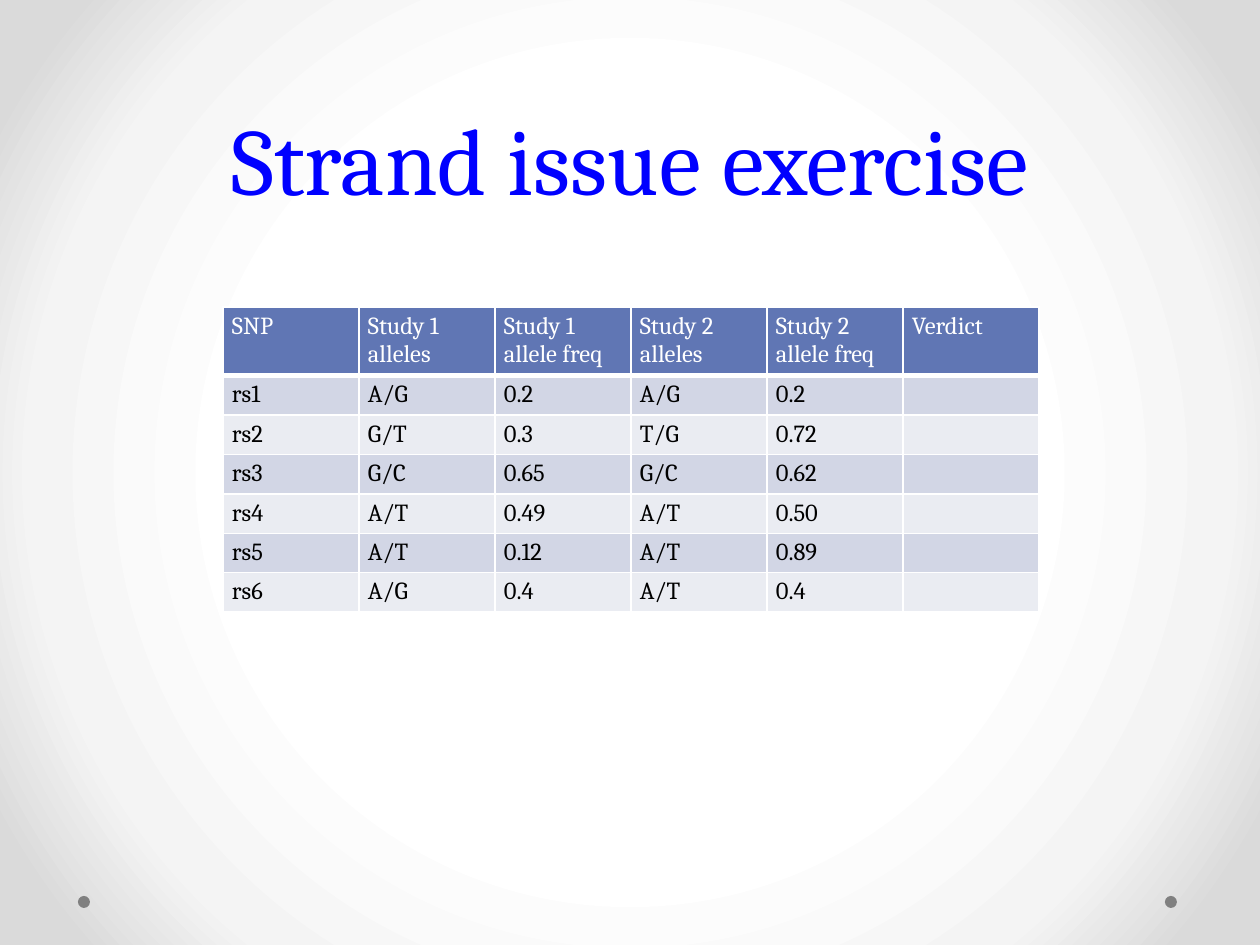
from dataclasses import dataclass

from lxml.etree import SubElement
from pptx import Presentation
from pptx.dml.color import RGBColor
from pptx.enum.shapes import MSO_SHAPE
from pptx.enum.text import MSO_ANCHOR, PP_ALIGN
from pptx.oxml.ns import qn
from pptx.util import Emu, Pt

EMU_PER_PX = 914400 // 126


@dataclass(frozen=True)
class Theme:
    font: str = "Cambria"
    title_size: int = 54
    title_spacing: int = 58
    table_size: int = 14
    title: str = "0000FF"
    header: str = "6076B4"
    header_text: str = "FFFFFF"
    body_text: str = "000000"
    bands: tuple = ("D2D6E5", "EAECF2")
    border: str = "FFFFFF"
    dot: str = "808080"
    backdrop: tuple = ((50, "FFFFFF"), (76, "F4F4F4"), (92, "DADADA"))


THEME = Theme()

SNP_ROWS = [
    ("SNP", "Study 1 alleles", "Study 1 allele freq",
     "Study 2 alleles", "Study 2 allele freq", "Verdict"),
    ("rs1", "A/G", "0.2", "A/G", "0.2", ""),
    ("rs2", "G/T", "0.3", "T/G", "0.72", ""),
    ("rs3", "G/C", "0.65", "G/C", "0.62", ""),
    ("rs4", "A/T", "0.49", "A/T", "0.50", ""),
    ("rs5", "A/T", "0.12", "A/T", "0.89", ""),
    ("rs6", "A/G", "0.4", "A/T", "0.4", ""),
]


def px(length):
    return Emu(length * EMU_PER_PX)


def add_color(parent, color):
    SubElement(parent, qn("a:srgbClr"), val=color)


def set_backdrop(page):
    """Fill the background with a circular gradient around the page centre."""
    page.background.fill.gradient()
    gradient = page.element.find(".//" + qn("a:gradFill"))
    for child in list(gradient):
        gradient.remove(child)
    stops = SubElement(gradient, qn("a:gsLst"))
    for percent, color in THEME.backdrop:
        add_color(SubElement(stops, qn("a:gs"), pos=str(percent * 1000)), color)
    circle = SubElement(gradient, qn("a:path"))
    circle.set("path", "circle")
    SubElement(circle, qn("a:fillToRect"), l="50000", t="50000", r="50000", b="50000")


def style_text(paragraph, size, color):
    for span in paragraph.runs:
        span.font.name = THEME.font
        span.font.size = Pt(size)
        span.font.color.rgb = RGBColor.from_string(color)


def add_dot(page, left, top, size):
    dot = page.shapes.add_shape(MSO_SHAPE.OVAL, px(left), px(top), px(size), px(size))
    dot.shadow.inherit = False
    dot.fill.solid()
    dot.fill.fore_color.rgb = RGBColor.from_string(THEME.dot)
    dot.line.fill.background()


def add_title(page, text, left, top, width, height):
    box = page.shapes.add_textbox(px(left), px(top), px(width), px(height))
    frame = box.text_frame
    frame.word_wrap = True
    frame.vertical_anchor = MSO_ANCHOR.BOTTOM
    frame.text = text
    paragraph = frame.paragraphs[0]
    paragraph.alignment = PP_ALIGN.CENTER
    paragraph.line_spacing = Pt(THEME.title_spacing)
    style_text(paragraph, THEME.title_size, THEME.title)


def set_borders(cell, bottom_width):
    properties = cell._tc.get_or_add_tcPr()
    for side, width in (("L", 1), ("R", 1), ("T", 1), ("B", bottom_width)):
        line = SubElement(properties, qn("a:ln" + side), w=str(Pt(width)))
        add_color(SubElement(line, qn("a:solidFill")), THEME.border)


def fill_cell(cell, text, fill, color, bottom_width):
    cell.margin_left = cell.margin_right = px(9)
    cell.margin_top = cell.margin_bottom = px(5)
    set_borders(cell, bottom_width)
    cell.fill.solid()
    cell.fill.fore_color.rgb = RGBColor.from_string(fill)
    cell.text = text
    paragraph = cell.text_frame.paragraphs[0]
    style_text(paragraph, THEME.table_size, color)
    if not text:  # an empty cell would otherwise stretch its row to 18 pt text
        SubElement(paragraph._p, qn("a:endParaRPr"), sz=str(THEME.table_size * 100))


def add_snp_table(page, left, top, column_width, header_height, row_height):
    row_count, column_count = len(SNP_ROWS), len(SNP_ROWS[0])
    table = page.shapes.add_table(
        row_count, column_count, px(left), px(top), px(column_width * column_count),
        px(header_height + row_height * (row_count - 1))).table
    for column in table.columns:
        column.width = px(column_width)
    for index, values in enumerate(SNP_ROWS):
        is_header = index == 0
        table.rows[index].height = px(header_height if is_header else row_height)
        if is_header:
            style = (THEME.header, THEME.header_text, 3)
        else:
            style = (THEME.bands[(index - 1) % 2], THEME.body_text, 1)
        for column, text in enumerate(values):
            fill_cell(table.cell(index, column), text, *style)


def main():
    deck = Presentation()
    deck.slide_width, deck.slide_height = px(1260), px(945)
    page = deck.slides.add_slide(deck.slide_layouts[6])
    set_backdrop(page)
    for left in (1165, 78):
        add_dot(page, left, 896, 12)
    add_title(page, "Strand issue exercise", 63, 100, 1134, 121)
    add_snp_table(page, 223, 307, 136, 66, 38)
    deck.save("out.pptx")


if __name__ == "__main__":
    main()
